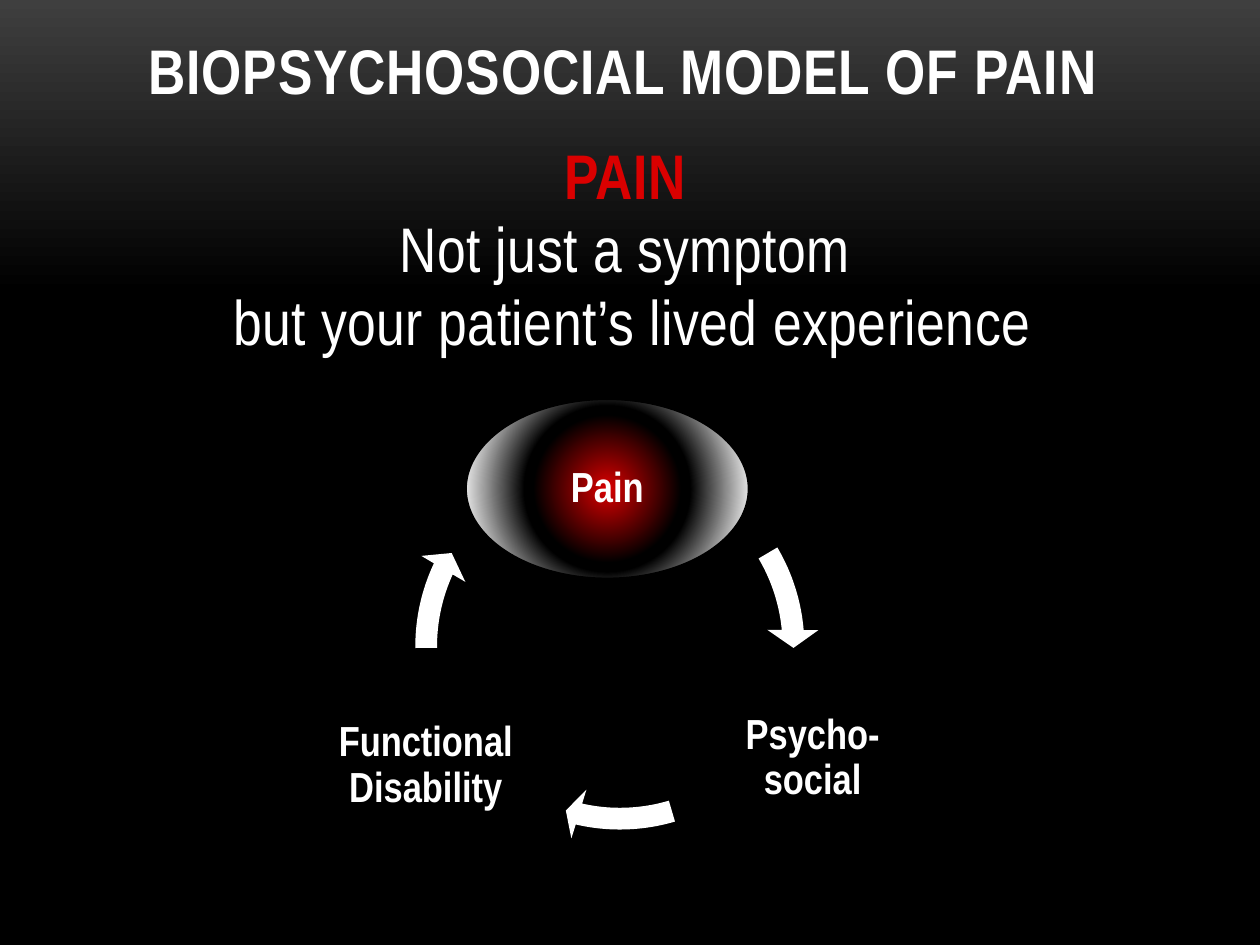
from pptx import Presentation
from pptx.dml.color import RGBColor
from pptx.enum.shapes import MSO_SHAPE as Shape
from pptx.enum.text import MSO_ANCHOR as Anchor, PP_ALIGN as Align
from pptx.oxml import parse_xml
from pptx.oxml.ns import nsdecls, qn
from pptx.util import Inches, Pt

FONT = "Arial Narrow"
WHITE = RGBColor(0xFF, 0xFF, 0xFF)
BLACK = RGBColor(0x00, 0x00, 0x00)
GREY = RGBColor(0x3F, 0x3F, 0x3F)
RED = RGBColor(0xDA, 0x00, 0x00)

LINEAR_DOWN = '<a:lin ang="5400000" scaled="0"/>'
FROM_CENTRE = ('<a:path path="circle"><a:fillToRect l="50000" t="50000" '
               'r="50000" b="50000"/></a:path>')


def set_gradient(fill, element, stops, direction):
    """Fill with any number of (percent, colour) stops."""
    fill.gradient()
    current = next(element.iter(qn("a:gradFill")))
    stop_xml = "".join(
        f'<a:gs pos="{percent * 1000}"><a:srgbClr val="{color}"/></a:gs>'
        for percent, color in stops)
    current.getparent().replace(current, parse_xml(
        f'<a:gradFill {nsdecls("a")} rotWithShape="1">'
        f'<a:gsLst>{stop_xml}</a:gsLst>{direction}</a:gradFill>'))


def write(para, text, size=24, color=WHITE, bold=True, tracking=0,
          line_spacing=None, space_before=0):
    para.alignment = Align.CENTER
    para.space_before = Pt(space_before)
    if line_spacing:
        para.line_spacing = line_spacing
    span = para.add_run()
    span.text = text
    span.font.name = FONT
    span.font.size = Pt(size)
    span.font.bold = bold
    span.font.color.rgb = color
    if tracking:
        span.font._element.set("spc", str(round(tracking * 100)))


def place(shape, left, top, width, height):
    shape.left, shape.top = Inches(left), Inches(top)
    shape.width, shape.height = Inches(width), Inches(height)


def add_title(page, box):
    title = page.shapes.title
    place(title, *box)
    frame = title.text_frame
    frame.word_wrap = True
    frame.vertical_anchor = Anchor.BOTTOM
    write(frame.paragraphs[0], "BIOPSYCHOSOCIAL MODEL OF PAIN",
          size=36, tracking=0.5)


def add_statement(page, box):
    frame = page.shapes.add_textbox(*map(Inches, box)).text_frame
    frame.word_wrap = True
    lines = [("PAIN ", RED, True),
             ("Not just a symptom ", WHITE, False),
             ("but your patient’s lived experience", WHITE, False)]
    for index, (text, color, bold) in enumerate(lines):
        para = frame.add_paragraph() if index else frame.paragraphs[0]
        write(para, text, size=36, color=color, bold=bold, tracking=0.3,
              line_spacing=0.8, space_before=7.2 if index else 0)


def add_stage(page, text, box, stops=None):
    oval = page.shapes.add_shape(Shape.OVAL, *map(Inches, box))
    oval.shadow.inherit = False
    if stops:
        set_gradient(oval.fill, oval._element, stops, FROM_CENTRE)
    else:
        oval.fill.solid()
        oval.fill.fore_color.rgb = BLACK
    oval.line.color.rgb = BLACK
    oval.line.width = Pt(2.25)
    frame = oval.text_frame
    frame.word_wrap = True
    frame.vertical_anchor = Anchor.MIDDLE
    frame.margin_left = frame.margin_right = Inches(0.01)
    frame.margin_top = frame.margin_bottom = Inches(0.07)
    write(frame.paragraphs[0], text, line_spacing=0.9)


def add_cycle_arrow(page, box, head, end, start, rotation=0):
    """Draw an arc arrow; head, end and start are angles in degrees."""
    arrow = page.shapes.add_shape(Shape.CIRCULAR_ARROW, *map(Inches, box))
    arrow.shadow.inherit = False
    arrow.rotation = rotation
    angles = [degrees * 0.6 for degrees in (head, end, start)]
    for index, value in enumerate([0.052, *angles, 0.061]):
        arrow.adjustments[index] = value
    arrow.fill.solid()
    arrow.fill.fore_color.rgb = WHITE
    arrow.line.fill.background()


def add_cycle(page, box):
    left, top, width, height = box
    oval_size = (2.26, 1.44)
    ring = 3.32
    add_cycle_arrow(page, (left + 1.01, top + 0.22, ring, ring),
                    4.22, 66.91, 37.56, rotation=36)
    add_stage(page, "Functional Disability",
              (left, top + height - oval_size[1], *oval_size))
    add_stage(page, "Psycho-social",
              (left + width - oval_size[0], top + 2.14, *oval_size))
    add_stage(page, "Pain", (left + 1.44, top, *oval_size),
              [(0, RED), (44, BLACK), (49, BLACK), (88, WHITE)])
    for end, start in [(354.88, 329.44), (204.96, 179.52)]:
        add_cycle_arrow(page, (left + 0.93, top + 0.31, ring, ring),
                        5.6, end, start)


def main():
    deck = Presentation()
    deck.slide_width, deck.slide_height = Inches(10), Inches(7.5)
    page = deck.slides.add_slide(deck.slide_layouts[5])
    set_gradient(page.background.fill, page._element,
                 [(0, GREY), (31, BLACK), (100, BLACK)], LINEAR_DOWN)
    add_title(page, (0.69, 0.2, 8.51, 0.7))
    add_statement(page, (0.85, 1.15, 8.34, 1.79))
    add_cycle(page, (2.25, 3.16, 5.33, 3.64))
    deck.save("out.pptx")


if __name__ == "__main__":
    main()
